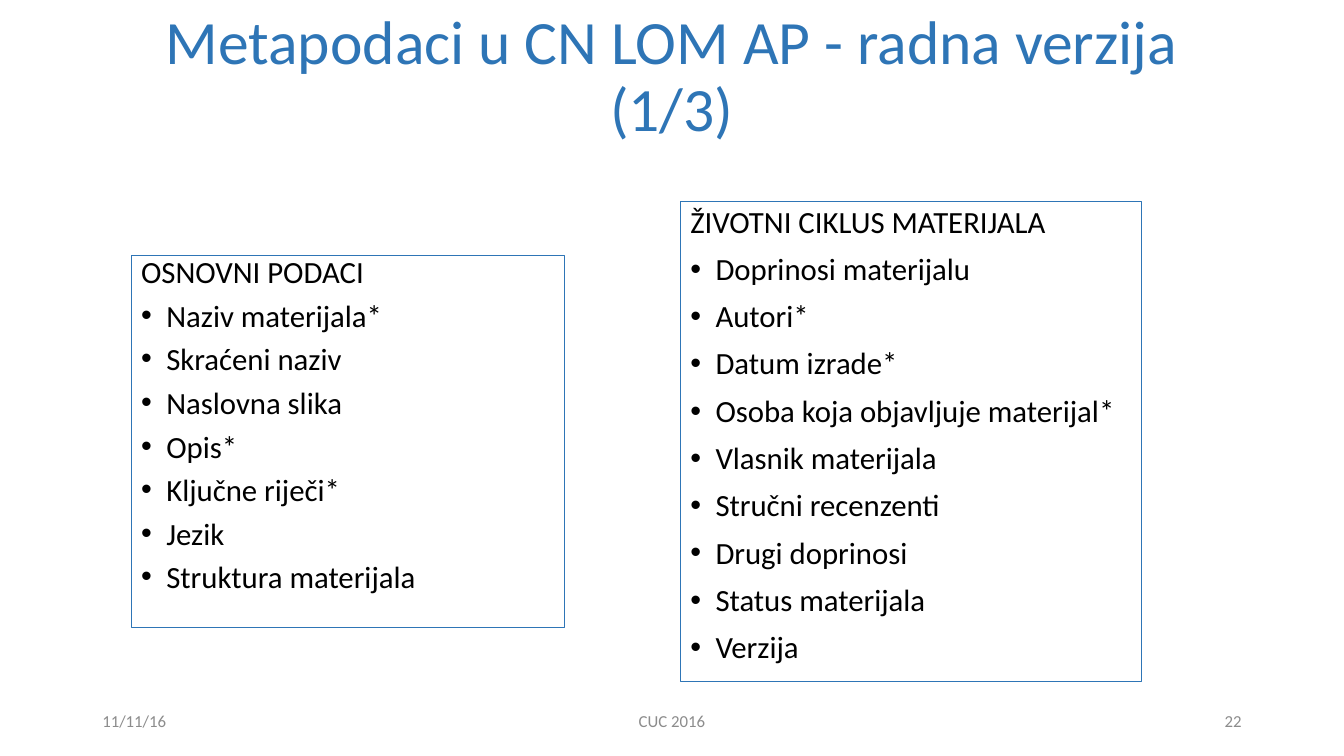
from lxml import etree
from pptx import Presentation
from pptx.dml.color import RGBColor
from pptx.enum.shapes import MSO_SHAPE
from pptx.enum.text import MSO_ANCHOR, PP_ALIGN
from pptx.oxml.ns import qn
from pptx.util import Pt

PX = 9525  # EMU per px, 96 px to the inch
FONT = "Calibri"
BLUE = RGBColor(0x2E, 0x75, 0xB6)
BLACK = RGBColor(0x00, 0x00, 0x00)
GREY = RGBColor(0x8C, 0x8C, 0x8C)

BASIC_DATA = [
    "OSNOVNI PODACI",
    "Naziv materijala*",
    "Skraćeni naziv",
    "Naslovna slika",
    "Opis*",
    "Ključne riječi*",
    "Jezik",
    "Struktura materijala",
]
LIFE_CYCLE = [
    "ŽIVOTNI CIKLUS MATERIJALA",
    "Doprinosi materijalu",
    "Autori*",
    "Datum izrade*",
    "Osoba koja objavljuje materijal*",
    "Vlasnik materijala",
    "Stručni recenzenti",
    "Drugi doprinosi",
    "Status materijala",
    "Verzija",
]
FOOTERS = [
    (88, 288, "11/11/16", PP_ALIGN.LEFT),
    (424, 432, "CUC 2016", PP_ALIGN.CENTER),
    (904, 288, "22", PP_ALIGN.RIGHT),
]


def px(*lengths):
    return [n * PX for n in lengths]


def style_paragraph(p, size, color, align, line_spacing=1.0):
    p.alignment = align
    p.line_spacing = line_spacing
    for r in p.runs:
        r.font.name = FONT
        r.font.size = Pt(size)
        r.font.color.rgb = color


def add_label(s, box, text, size, color, align, line_spacing=1.0):
    tf = s.shapes.add_textbox(*px(*box)).text_frame
    tf.word_wrap = True
    tf.vertical_anchor = MSO_ANCHOR.MIDDLE
    tf.text = text
    style_paragraph(tf.paragraphs[0], size, color, align, line_spacing)


def add_bullet(p):
    pPr = p._p.get_or_add_pPr()
    indent = 24 * PX
    pPr.set("marL", str(indent))
    pPr.set("indent", str(-indent))
    etree.SubElement(pPr, qn("a:buFont")).set("typeface", "Arial")
    etree.SubElement(pPr, qn("a:buChar")).set("char", "•")


def add_list_box(s, box, lines, line_spacing):
    """Outlined rectangle with a heading line followed by bullets."""
    sp = s.shapes.add_shape(MSO_SHAPE.RECTANGLE, *px(*box))
    sp.shadow.inherit = False
    sp.fill.background()
    sp.line.color.rgb = BLUE
    sp.line.width = Pt(0.75)
    tf = sp.text_frame
    tf.word_wrap = True
    tf.vertical_anchor = MSO_ANCHOR.TOP
    tf.text = "\n".join(lines)
    for i, p in enumerate(tf.paragraphs):
        style_paragraph(p, 22, BLACK, PP_ALIGN.LEFT, line_spacing)
        p.space_before = Pt(10)
        if i:
            add_bullet(p)


def main():
    prs = Presentation()
    prs.slide_width, prs.slide_height = px(1280, 720)
    s = prs.slides.add_slide(prs.slide_layouts[6])
    add_label(s, (88, 34, 1104, 81), "Metapodaci u CN LOM AP - radna verzija (1/3)",
              44, BLUE, PP_ALIGN.CENTER, 0.9)
    add_list_box(s, (125, 243, 413, 355), BASIC_DATA, 0.8)
    add_list_box(s, (648, 192, 439, 457), LIFE_CYCLE, 0.9)
    for left, width, text, align in FOOTERS:
        add_label(s, (left, 667, width, 38), text, 12, GREY, align)
    prs.save("out.pptx")


if __name__ == "__main__":
    main()
